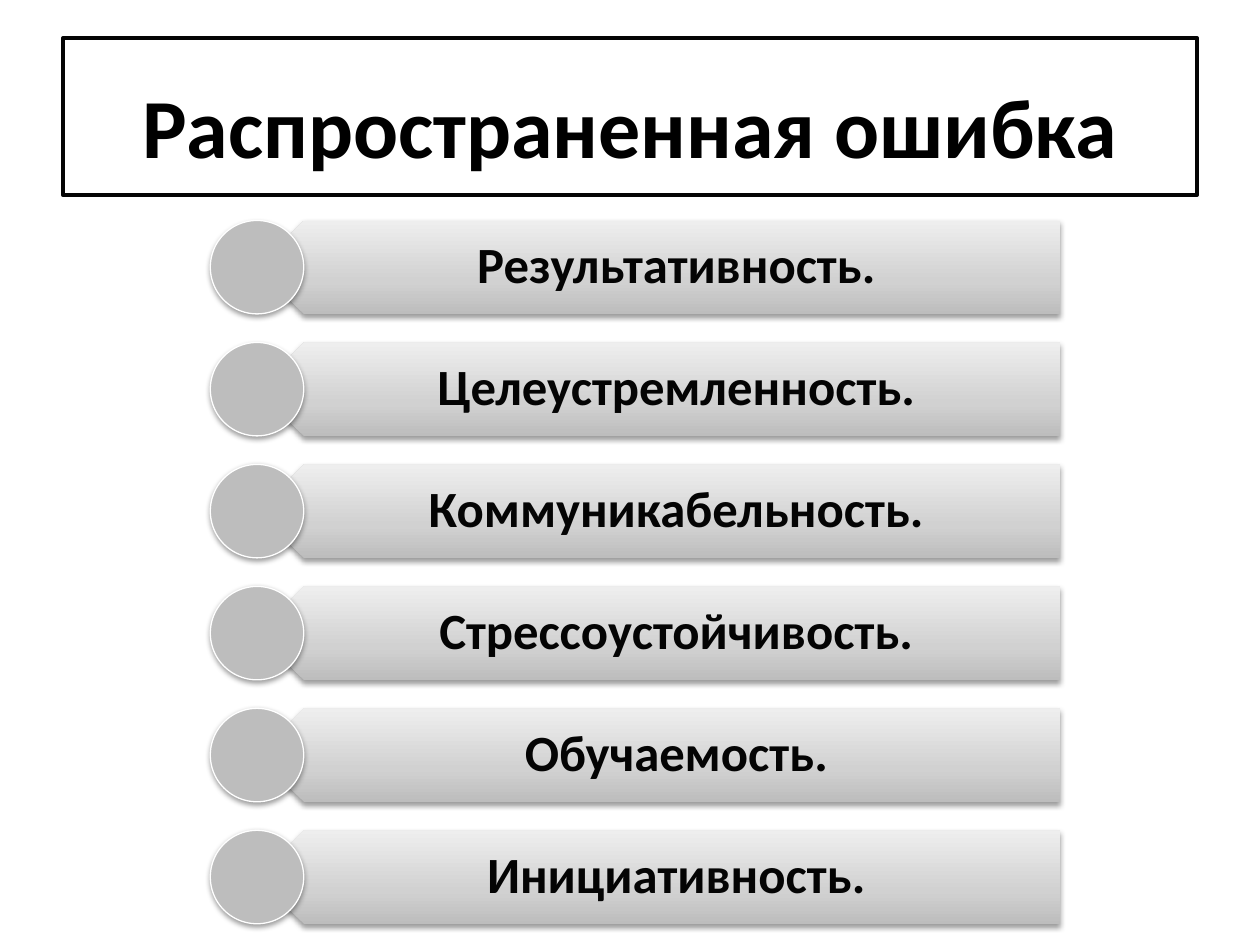
from lxml import etree
from pptx import Presentation
from pptx.dml.color import RGBColor
from pptx.enum.shapes import MSO_SHAPE
from pptx.enum.text import MSO_ANCHOR, PP_ALIGN
from pptx.oxml import parse_xml
from pptx.util import Pt

RECTANGLE, OVAL, PENTAGON = MSO_SHAPE.RECTANGLE, MSO_SHAPE.OVAL, MSO_SHAPE.PENTAGON
MIDDLE, CENTER = MSO_ANCHOR.MIDDLE, PP_ALIGN.CENTER
DRAWING = "http://schemas.openxmlformats.org/drawingml/2006/main"

GRADIENT = f"""<a:gradFill xmlns:a="{DRAWING}" rotWithShape="0"><a:gsLst>
<a:gs pos="0"><a:srgbClr val="BDBDBD"/></a:gs>
<a:gs pos="35000"><a:srgbClr val="D1D1D1"/></a:gs>
<a:gs pos="100000"><a:srgbClr val="EEEEEE"/></a:gs>
</a:gsLst><a:lin ang="16200000" scaled="0"/></a:gradFill>"""
SHADOW = f"""<a:outerShdw xmlns:a="{DRAWING}" blurRad="40000" dist="20000"
dir="5400000" rotWithShape="0"><a:srgbClr val="000000"><a:alpha val="38000"/>
</a:srgbClr></a:outerShdw>"""


def color(value):
    return RGBColor.from_string(value)


def write(box, text, size, text_color):
    frame = box.text_frame
    frame.word_wrap = True
    frame.vertical_anchor = MIDDLE
    para = frame.paragraphs[0]
    para.alignment = CENTER
    span = para.add_run()
    span.text = text
    span.font.name = "Calibri"
    span.font.size = Pt(size)
    span.font.bold = True
    span.font.color.rgb = color(text_color)
    return frame


deck = Presentation()
deck.slide_width, deck.slide_height = Pt(720), Pt(540)
page = deck.slides.add_slide(deck.slide_layouts[6])

# Title
title = page.shapes.add_shape(RECTANGLE, Pt(36), Pt(21.6), Pt(648), Pt(90))
title.shadow.inherit = False
title.fill.solid()
title.fill.fore_color.rgb = color("FFFFFF")
title.line.color.rgb = color("040404")
title.line.width = Pt(2)
title_frame = write(title, "Распространенная ошибка", 48, "000000")
title_frame.margin_top = Pt(13)

# List of qualities: a bar, its label and a circle in each row
qualities = ["Результативность.", "Целеустремленность.", "Коммуникабельность.",
             "Стрессоустойчивость.", "Обучаемость.", "Инициативность."]
first_top, row_step, row_height = 126, 69.7, 53.4
group = page.shapes.add_group_shape()

for row, quality in enumerate(qualities):
    top, height = Pt(first_top + row * row_step), Pt(row_height)

    bar = group.shapes.add_shape(PENTAGON, Pt(146.9), top, Pt(458.8), height)
    bar.rotation = 180
    bar.line.fill.background()
    bar.fill.background()
    no_fill = bar._element.spPr.find(f"{{{DRAWING}}}noFill")
    no_fill.getparent().replace(no_fill, parse_xml(GRADIENT))

    label = group.shapes.add_textbox(Pt(160.3), top, Pt(445.4), height)
    frame = write(label, quality, 29, "040404")
    frame.margin_left, frame.margin_right = Pt(23.6), Pt(16.5)
    frame.margin_top = frame.margin_bottom = Pt(8.8)
    frame.paragraphs[0].line_spacing = 0.9

    circle = group.shapes.add_shape(OVAL, Pt(120.2), top, height, height)
    circle.fill.solid()
    circle.fill.fore_color.rgb = color("BDBDBD")
    circle.line.color.rgb = color("FFFFFF")
    circle.line.width = Pt(0.75)

    for shape in (bar, circle):
        effects = etree.SubElement(shape._element.spPr, f"{{{DRAWING}}}effectLst")
        effects.append(parse_xml(SHADOW))

deck.save("out.pptx")
